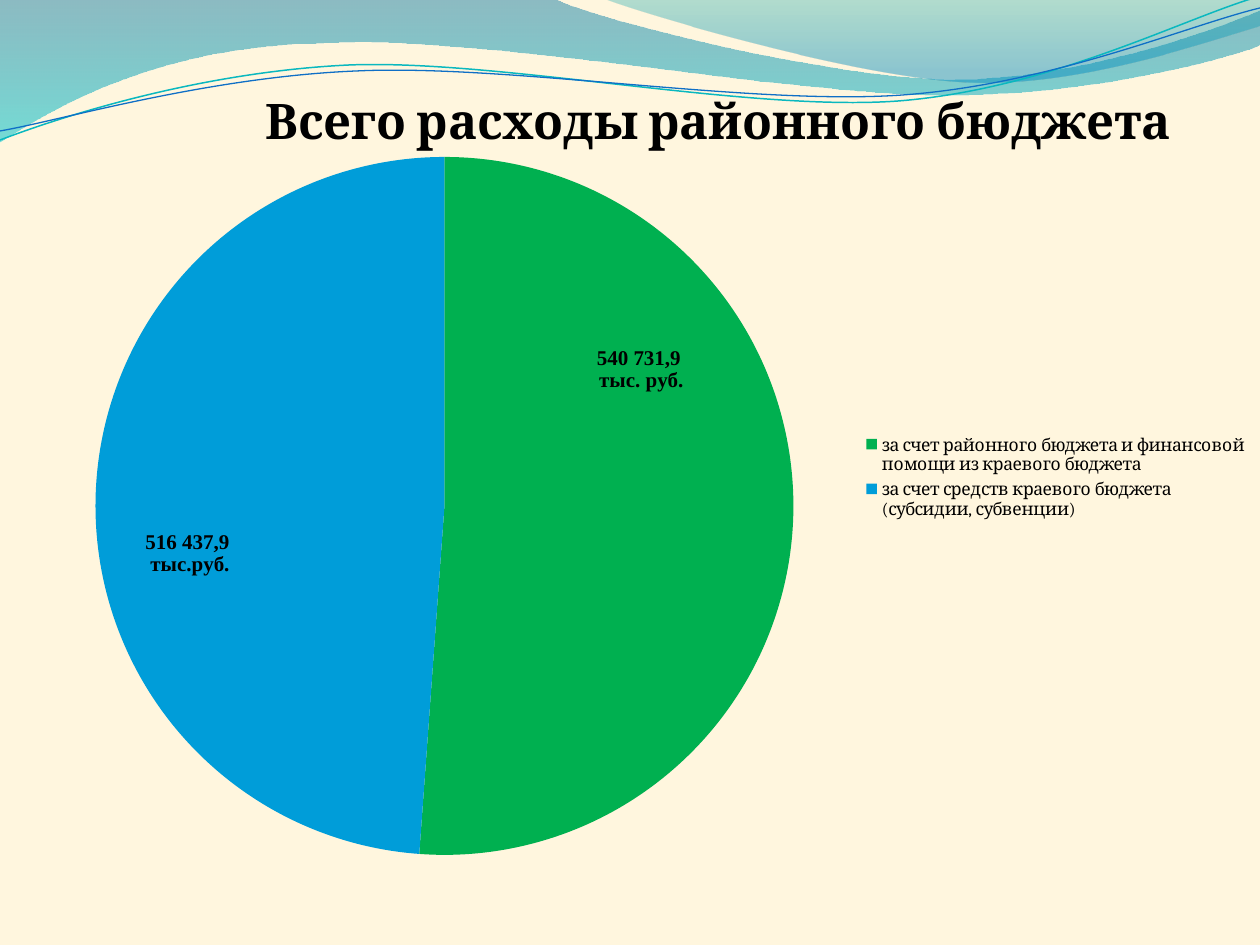
from lxml import etree
from pptx import Presentation
from pptx import util as u
from pptx.chart import data as chart_data
from pptx.dml.color import RGBColor
from pptx.enum import chart as ch
from pptx.oxml.ns import qn

PX = 914400 / 126
CREAM = RGBColor(0xFF, 0xF6, 0xDE)
BLACK = RGBColor(0, 0, 0)
GREEN = RGBColor(0x00, 0xB0, 0x50)
SKY = RGBColor(0x00, 0x9D, 0xD9)
DEEP_BLUE = RGBColor(0x00, 0x74, 0xA1)
AQUA = RGBColor(0x00, 0xC6, 0xCF)
TEAL = RGBColor(0x00, 0xA1, 0xA9)
OCEAN = RGBColor(0x00, 0x8B, 0xBF)
TEAL_LINE = RGBColor(0x0A, 0xB8, 0xBF)
BLUE_LINE = RGBColor(0x0F, 0x6F, 0xC6)
CHART_BOX = (0, 29, 1260, 896)


def px(value):
    return round(value * PX)


def set_layout(element, index, mode=None, target=None, **lengths):
    for old in element.findall(qn("c:layout")):
        element.remove(old)
    layout = etree.Element(qn("c:layout"))
    manual = etree.SubElement(layout, qn("c:manualLayout"))
    sizes = dict(zip("xywh", CHART_BOX[2:] * 2))
    values = {"layoutTarget": target, "xMode": mode, "yMode": mode}
    values.update({name: length / sizes[name] for name, length in lengths.items()})
    for name, value in values.items():
        if value is not None:
            etree.SubElement(manual, qn("c:" + name)).set("val", str(value))
    element.insert(index, layout)


class SlidePainter:
    text_format = {"name": "Cambria", "size": u.Pt(10), "bold": False}
    title_format = {"name": "Cambria", "size": u.Pt(28), "bold": True}
    label_format = {"name": "Times New Roman", "size": u.Pt(12), "bold": True}

    def __init__(self, deck):
        self.slide = deck.slides.add_slide(deck.slide_layouts[6])
        fill = self.slide.background.fill
        fill.solid()
        fill.fore_color.rgb = CREAM

    def style(self, font, values):
        for name, value in values.items():
            setattr(font, name, value)
        font.color.rgb = BLACK

    def freeform(self, start, segments, closed):
        builder = self.slide.shapes.build_freeform(*map(px, start))
        points = [(px(x), px(y)) for segment in segments for x, y in segment]
        builder.add_line_segments(points, close=closed)
        shape = builder.convert_to_shape()
        shape.shadow.inherit = False
        lines = iter(list(shape._element.spPr.iter(qn("a:lnTo"))))
        for segment in segments:
            group = [next(lines) for _ in segment]
            if len(group) == 3:
                curve = etree.Element(qn("a:cubicBezTo"))
                group[0].addprevious(curve)
                for line in group:
                    curve.append(line[0])
                    line.getparent().remove(line)
        return shape

    def wave(self, start, segments, stops):
        shape = self.freeform(start, segments, True)
        shape.line.fill.background()
        shape.fill.gradient()
        shape.fill.gradient_angle = 270
        for stop, (position, color, _) in zip(shape.fill.gradient_stops, stops):
            stop.position = position
            stop.color.rgb = color
        colors = list(shape._element.spPr.iter(qn("a:srgbClr")))
        for color, (_, _, opacity) in zip(colors, stops):
            etree.SubElement(color, qn("a:alpha")).set("val", str(opacity * 1000))

    def ripple(self, start, segments, color, width):
        shape = self.freeform(start, segments, False)
        shape.fill.background()
        shape.line.color.rgb = color
        shape.line.width = u.Pt(width)

    def rich_text(self, frame, content, values):
        frame.text = content
        for para in frame.paragraphs:
            for span in para.runs:
                self.style(span.font, values)

    def pie(self, title, slices):
        source = chart_data.CategoryChartData()
        source.categories = [part["name"] for part in slices]
        source.add_series("Series 1", [part["value"] for part in slices])
        chart = self.slide.shapes.add_chart(
            ch.XL_CHART_TYPE.PIE, *map(px, CHART_BOX), source).chart
        self.style(chart.font, self.text_format)

        chart.has_title = True
        self.rich_text(chart.chart_title.text_frame, title, self.title_format)
        set_layout(chart.chart_title._element, 1, "edge", x=257, y=52)

        chart.has_legend = True
        chart.legend.position = ch.XL_LEGEND_POSITION.RIGHT
        chart.legend.include_in_layout = False
        self.style(chart.legend.font, self.text_format)
        set_layout(chart.legend._element, 1, "edge", x=860, y=401, w=391, h=95)

        plot = chart.plots[0]
        plot.vary_by_categories = True
        set_layout(chart._chartSpace.chart.plotArea, 0, "edge", "inner",
                   x=78, y=128, w=733, h=698)
        series = plot.series[0]
        series.data_labels.show_value = True
        self.style(series.data_labels.font, self.label_format)

        for index, part in enumerate(slices):
            point = series.points[index]
            point.format.fill.solid()
            point.format.fill.fore_color.rgb = part["color"]
            label = point.data_label
            self.rich_text(label.text_frame, part["label"], self.label_format)
            label.position = ch.XL_LABEL_POSITION.CENTER
            x, y = part["shift"]
            set_layout(label._dLbl, 1, x=x, y=y)


def main():
    deck = Presentation()
    deck.slide_width, deck.slide_height = px(1260), px(945)
    painter = SlidePainter(deck)

    painter.wave((0, 0), [
        [(554, -1)],
        [(600, 21), (837, 79), (955, 79)], [(1075, 79), (1207, 33), (1260, 11)],
        [(1261, 45)],
        [(1239, 55), (1096, 96), (940, 95)], [(784, 94), (481, 35), (324, 43)],
        [(163, 45), (58, 105), (-1, 142)],
    ], [(0, DEEP_BLUE, 45), (1, AQUA, 55)])
    painter.wave((604, -1), [
        [(641, 14), (859, 78), (969, 82)], [(1079, 87), (1211, 40), (1260, 26)],
        [(1260, 0)],
    ], [(0, TEAL, 30), (0.8, OCEAN, 45)])

    painter.ripple((0, 140), [
        [(60, 117), (199, 72), (349, 65)],
        [(498, 59), (747, 112), (898, 101)], [(1050, 89), (1182, 19), (1257, -3)],
    ], TEAL_LINE, 0.85)
    painter.ripple((0, 131), [
        [(59, 121), (207, 77), (357, 71)],
        [(508, 64), (752, 106), (903, 95)], [(1053, 84), (1186, 26), (1260, 8)],
    ], BLUE_LINE, 0.75)

    painter.pie("Всего расходы районного бюджета ", [
        {"name": "за счет районного бюджета и финансовой помощи из краевого бюджета",
         "value": 540732, "color": GREEN,
         "label": "540 731,9\n тыс. руб.", "shift": (20, -143)},
        {"name": "за счет средств краевого бюджета (субсидии, субвенции)",
         "value": 516438, "color": SKY,
         "label": "516 437,9 \nтыс.руб.", "shift": (-80, 54)},
    ])
    deck.save("out.pptx")


if __name__ == "__main__":
    main()
